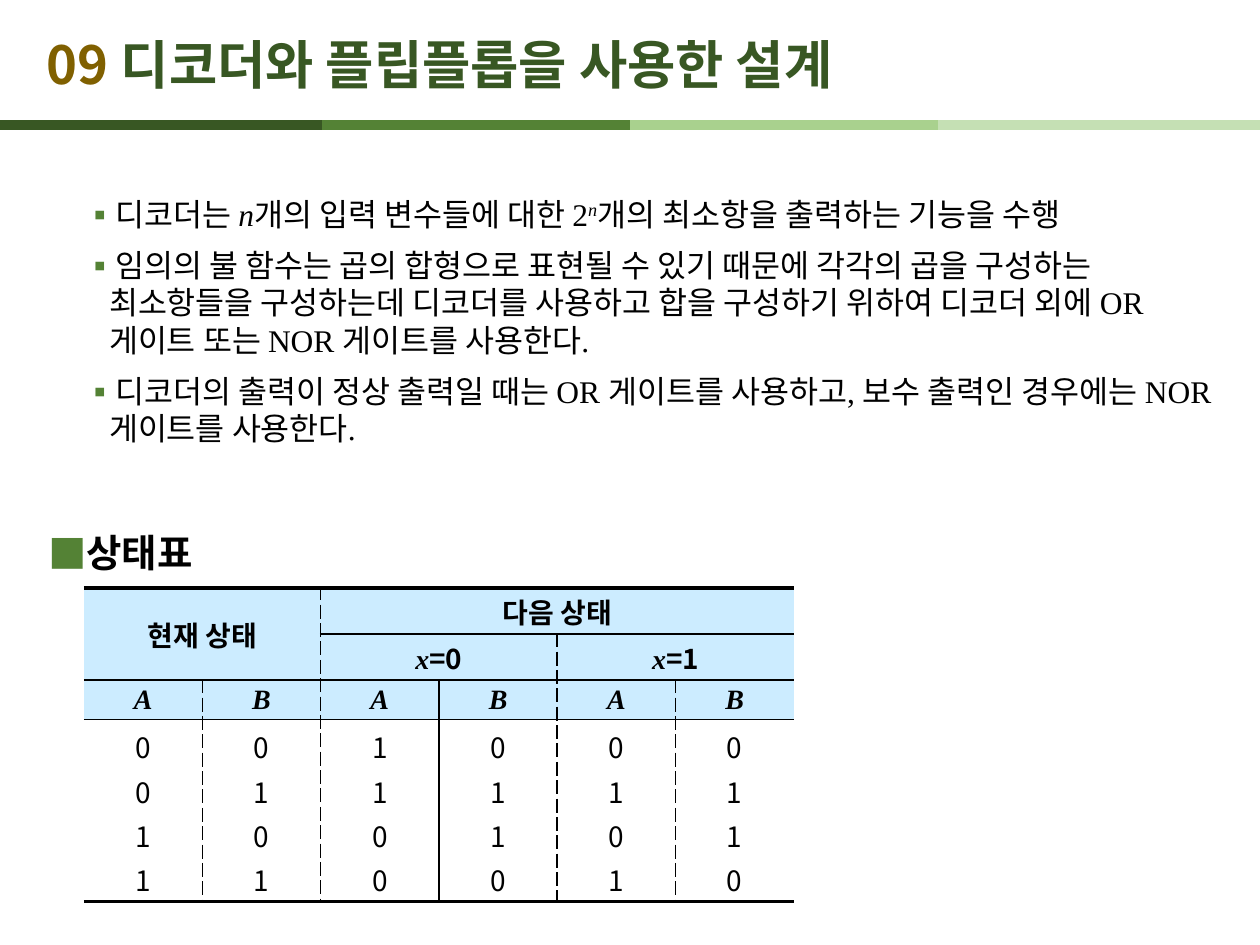
from lxml import etree
from pptx import Presentation
from pptx.dml.color import RGBColor
from pptx.enum.shapes import MSO_CONNECTOR
from pptx.enum.text import MSO_ANCHOR, PP_ALIGN
from pptx.oxml.ns import qn
from pptx.util import Emu, Pt

STRAIGHT = MSO_CONNECTOR.STRAIGHT
MIDDLE = MSO_ANCHOR.MIDDLE
CENTER = PP_ALIGN.CENTER

BLACK = RGBColor(0x00, 0x00, 0x00)
GOLD = RGBColor(0x80, 0x60, 0x00)
DARK_GREEN = RGBColor(0x38, 0x57, 0x23)
GREEN = RGBColor(0x54, 0x82, 0x35)
LIGHT_GREEN = RGBColor(0xA9, 0xD1, 0x8E)
PALE_GREEN = RGBColor(0xC5, 0xE0, 0xB4)
HEADER_BLUE = RGBColor(0xCC, 0xEC, 0xFF)

SANS = "Noto Sans CJK KR"
SERIF = "Times New Roman"

BULLETS = [
    [("디코더는 ", ""), ("n", "italic"), ("개의 입력 변수들에 대한 2", ""),
     ("n", "italic super"), ("개의 최소항을 출력하는 기능을 수행", "")],
    [("임의의 불 함수는 곱의 합형으로 표현될 수 있기 때문에 각각의 곱을 구성하는 "
      "최소항들을 구성하는데 디코더를 사용하고 합을 구성하기 위하여 디코더 외에 OR "
      "게이트 또는 NOR 게이트를 사용한다.", "")],
    [("디코더의 출력이 정상 출력일 때는 OR 게이트를 사용하고, 보수 출력인 경우에는 "
      "NOR 게이트를 사용한다.", "")],
]

STATE_COLUMNS = ["0011", "0101", "1100", "0110", "0101", "0110"]
ROW_HEIGHTS = [46, 46, 36, 182]
# Horizontal rules: boundary -> (points, first column)
ROW_RULES = {0: (2.25, 0), 1: (1, 2), 2: (1, 0), 3: (1, 0), 4: (2.25, 0)}
# Vertical rules: boundary -> (dash, first row)
COLUMN_RULES = {1: ("sysDash", 2), 2: ("sysDash", 0), 3: ("solid", 2),
                4: ("sysDash", 1), 5: ("sysDash", 2)}


def px(length):
    return Emu(round(length * 914400 / 126))


def add_run(paragraph, text, size, font=SERIF, color=BLACK, bold=False, style=""):
    """Add a run; style may hold the words italic and super."""
    run = paragraph.add_run()
    run.text = text
    run.font.size = Pt(size)
    run.font.name = font
    run.font.bold = bold
    run.font.italic = "italic" in style
    run.font.color.rgb = color
    properties = run._r.get_or_add_rPr()
    if "super" in style:
        properties.set("baseline", "30000")
    etree.SubElement(properties, qn("a:ea"), typeface=SANS)


def add_text_frame(slide, left, top, width, height):
    text_frame = slide.shapes.add_textbox(px(left), px(top), px(width), px(height)).text_frame
    text_frame.word_wrap = True
    text_frame.margin_left = text_frame.margin_right = 0
    text_frame.margin_top = text_frame.margin_bottom = 0
    return text_frame


def set_bullet(paragraph, character, margin, hanging):
    properties = paragraph._p.get_or_add_pPr()
    properties.set("marL", str(px(margin)))
    properties.set("indent", str(-px(hanging)))
    color = etree.SubElement(properties, qn("a:buClr"))
    etree.SubElement(color, qn("a:srgbClr"), val=str(GREEN))
    etree.SubElement(properties, qn("a:buFont"), typeface=SANS)
    etree.SubElement(properties, qn("a:buChar"), char=character)


def add_title(slide, left, top, width, height):
    text_frame = add_text_frame(slide, left, top, width, height)
    text_frame.vertical_anchor = MIDDLE
    paragraph = text_frame.paragraphs[0]
    add_run(paragraph, "09 ", 30, SANS, GOLD, bold=True)
    add_run(paragraph, "디코더와 플립플롭을 사용한 설계", 30, SANS, DARK_GREEN, bold=True)


def add_color_bar(slide, left, top):
    length = 322
    bars = zip((0, 322, 630, 938), (DARK_GREEN, GREEN, LIGHT_GREEN, PALE_GREEN))
    for offset, color in bars:
        start = left + offset
        bar = slide.shapes.add_connector(
            STRAIGHT, px(start), px(top), px(start + length), px(top))
        bar.line.color.rgb = color
        bar.line.width = Pt(6)
        etree.SubElement(bar._element.spPr, qn("a:effectLst"))


def add_body(slide, left, top, width, height):
    text_frame = add_text_frame(slide, left, top, width, height)
    for index, parts in enumerate(BULLETS):
        paragraph = text_frame.add_paragraph() if index else text_frame.paragraphs[0]
        set_bullet(paragraph, "▪", 61, 25)
        paragraph.line_spacing = Pt(21.5)
        paragraph.space_before = Pt(3.6 if index else 0)
        paragraph.space_after = Pt(4)
        for text, style in parts:
            add_run(paragraph, text, 18, style=style)
    heading = text_frame.add_paragraph()
    set_bullet(heading, "■", 36, 36)
    heading.line_spacing = Pt(24)
    heading.space_before = Pt(45)
    add_run(heading, "상태표", 22, SANS, bold=True)


def set_border(cell, side, points, dash="solid"):
    """Draw one side of a cell; zero points leaves it empty."""
    line = etree.SubElement(cell._tc.get_or_add_tcPr(), qn("a:ln" + side),
                            w=str(Pt(points)))
    if not points:
        etree.SubElement(line, qn("a:noFill"))
        return
    fill = etree.SubElement(line, qn("a:solidFill"))
    etree.SubElement(fill, qn("a:srgbClr"), val=str(BLACK))
    etree.SubElement(line, qn("a:prstDash"), val=dash)


def format_cell(cell, row, column):
    cell.margin_left = cell.margin_right = px(5)
    cell.margin_top = cell.margin_bottom = px(3)
    cell.vertical_anchor = MIDDLE
    right = column + (cell.span_width if cell.is_merge_origin else 1)
    bottom = row + (cell.span_height if cell.is_merge_origin else 1)
    for side, boundary in (("L", column), ("R", right)):
        dash, first_row = COLUMN_RULES.get(boundary, ("solid", 4))
        set_border(cell, side, 1 if row >= first_row else 0, dash)
    for side, boundary in (("T", row), ("B", bottom)):
        points, first_column = ROW_RULES[boundary]
        set_border(cell, side, points if column >= first_column else 0)
    if row < 3:
        cell.fill.solid()
        cell.fill.fore_color.rgb = HEADER_BLUE
    else:
        cell.fill.background()


def add_state_table(slide, left, top, width):
    column_count = len(STATE_COLUMNS)
    table = slide.shapes.add_table(len(ROW_HEIGHTS), column_count, px(left), px(top),
                                   px(width), px(sum(ROW_HEIGHTS))).table
    table.first_row = table.horz_banding = False
    for table_column in table.columns:
        table_column.width = px(width / column_count)
    for table_row, height in zip(table.rows, ROW_HEIGHTS):
        table_row.height = px(height)

    for first, last in (((0, 0), (1, 1)), ((0, 2), (0, 5)),
                        ((1, 2), (1, 3)), ((1, 4), (1, 5))):
        table.cell(*first).merge(table.cell(*last))
    for row in range(len(ROW_HEIGHTS)):
        for column in range(column_count):
            format_cell(table.cell(row, column), row, column)

    headers = {(0, 0): [("현재 상태", SERIF, "")], (0, 2): [("다음 상태", SERIF, "")]}
    for column, value in ((2, 0), (4, 1)):
        headers[1, column] = [("x", SERIF, "italic"), (f"={value}", SANS, "")]
    for column in range(column_count):
        headers[2, column] = [("AB"[column % 2], SERIF, "italic")]
    for position, parts in headers.items():
        paragraph = table.cell(*position).text_frame.paragraphs[0]
        paragraph.alignment = CENTER
        for text, font, style in parts:
            add_run(paragraph, text, 16, font, bold=True, style=style)

    for column, states in enumerate(STATE_COLUMNS):
        text_frame = table.cell(3, column).text_frame
        for index, state in enumerate(states):
            paragraph = text_frame.add_paragraph() if index else text_frame.paragraphs[0]
            paragraph.alignment = CENTER
            paragraph.line_spacing = 1.1
            add_run(paragraph, state, 16, SANS)


def main():
    presentation = Presentation()
    presentation.slide_width, presentation.slide_height = px(1260), px(945)
    slide = presentation.slides.add_slide(presentation.slide_layouts[6])
    add_color_bar(slide, 0, 125)
    add_title(slide, 47, 26, 1029, 76)
    add_body(slide, 48, 195, 1164, 385)
    add_state_table(slide, 84, 588, 710)
    presentation.save("out.pptx")


if __name__ == "__main__":
    main()
